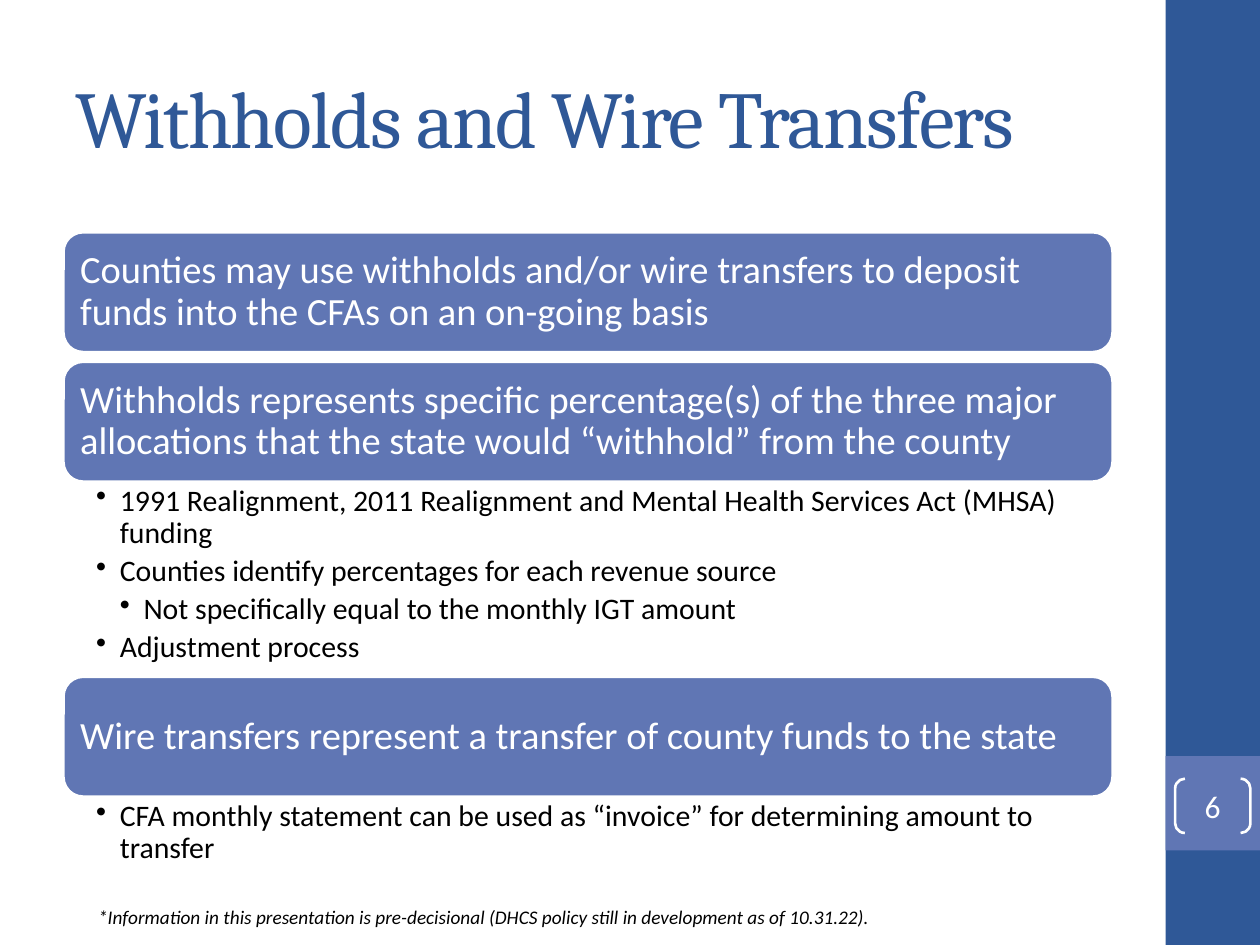
"""Build the slide on withholds and wire transfers."""
from lxml.etree import SubElement
from pptx import Presentation
from pptx.dml.color import RGBColor
from pptx.enum.shapes import MSO_SHAPE as Shape
from pptx.enum.text import MSO_ANCHOR as Anchor, PP_ALIGN as Align
from pptx.oxml.ns import qn
from pptx.util import Pt

COLORS = {"navy": "2F5897", "blue": "6076B4", "white": "FFFFFF", "black": "000000"}
TITLE = "Withholds and Wire Transfers"
FOOTNOTE = ("*Information in this presentation is pre-decisional "
            "(DHCS policy still in development as of 10.31.22).")
PAGE = "6"
SECTIONS = [
    ("Counties may use withholds and/or wire transfers to deposit funds into the CFAs "
     "on an on-going basis", []),
    ("Withholds represents specific percentage(s) of the three major allocations that "
     "the state would “withhold” from the county",
     [(1, "1991 Realignment, 2011 Realignment and Mental Health Services Act (MHSA) funding"),
      (1, "Counties identify percentages for each revenue source"),
      (2, "Not specifically equal to the monthly IGT amount"),
      (1, "Adjustment process")]),
    ("Wire transfers represent a transfer of county funds to the state",
     [(1, "CFA monthly statement can be used as “invoice” for determining amount to transfer")]),
]
LEFT, WIDTH = 36, 600
TOP, BANNER_HEIGHT, GAP = 132.5, 69, 5
DETAIL_HEIGHTS = {0: GAP, 1: 42.5, 4: 111}
INDENT = 13.5
SIDEBAR_LEFT, SIDEBAR_WIDTH = 666, 54


def color(name):
    return RGBColor.from_string(COLORS[name])


def add_block(kind, box, fill=None, line=None, weight=1):
    block = slide.shapes.add_shape(kind, *map(Pt, box))
    block.shadow.inherit = False
    if fill:
        block.fill.solid()
        block.fill.fore_color.rgb = color(fill)
    else:
        block.fill.background()
    if line:
        block.line.color.rgb = color(line)
        block.line.width = Pt(weight)
    else:
        block.line.fill.background()
    return block


def set_frame(holder, insets, anchor):
    frame = holder.text_frame
    frame.word_wrap = True
    frame.vertical_anchor = anchor
    frame.margin_left, frame.margin_top, frame.margin_right, frame.margin_bottom = map(Pt, insets)
    return frame


def write(paragraph, text, size, ink, face="Calibri", align=Align.LEFT):
    paragraph.text = text
    paragraph.alignment = align
    font = paragraph.font
    font.name, font.size, font.color.rgb = face, Pt(size), color(ink)


def add_text(box, insets=(7.2, 3.6, 7.2, 3.6), anchor=Anchor.TOP):
    return set_frame(slide.shapes.add_textbox(*map(Pt, box)), insets, anchor)


def add_details(details, top, height):
    frame = add_text((LEFT, top, WIDTH, height), (19, 2, 12, 2))
    for index, (level, text) in enumerate(details):
        detail = frame.add_paragraph() if index else frame.paragraphs[0]
        write(detail, text, 17, "black")
        detail.level = level
        detail.line_spacing = 0.9
        detail.space_after = Pt(3.4)
        properties = detail._p.get_or_add_pPr()
        properties.set("marL", str(Pt(INDENT * level)))
        properties.set("indent", str(Pt(-INDENT)))
        bullet = properties.makeelement(qn("a:buChar"), {"char": "•"})
        properties.insert_element_before(bullet, "a:tabLst", "a:defRPr", "a:extLst")


deck = Presentation()
deck.slide_width, deck.slide_height = Pt(720), Pt(540)
slide = deck.slides.add_slide(deck.slide_layouts[6])

add_block(Shape.RECTANGLE, (SIDEBAR_LEFT, 0, SIDEBAR_WIDTH, 540), "navy")
add_block(Shape.RECTANGLE, (SIDEBAR_LEFT, 432, SIDEBAR_WIDTH, 54), "blue")

footnote = add_text((49, 513.5, 595, 21)).paragraphs[0]
write(footnote, FOOTNOTE, 11, "black")
footnote.font.italic = True

title = add_text((LEFT, 21.6, WIDTH, 90), anchor=Anchor.MIDDLE).paragraphs[0]
write(title, TITLE, 46, "navy", "Cambria")
title.runs[0].font._element.set("spc", "-100")

top = TOP
for heading, details in SECTIONS:
    banner = add_block(Shape.ROUNDED_RECTANGLE, (LEFT, top, WIDTH, BANNER_HEIGHT),
                       "blue", "white", 2)
    statement = set_frame(banner, (6.5,) * 4, Anchor.MIDDLE).paragraphs[0]
    write(statement, heading, 22, "white")
    statement.line_spacing = 0.9
    top += BANNER_HEIGHT
    height = DETAIL_HEIGHTS[len(details)]
    if details:
        add_details(details, top, height)
    top += height

brackets = add_block(Shape.DOUBLE_BRACKET, (671.5, 445, 43, 31), line="white", weight=1.5)
brackets.adjustments[0] = 0.18
page = set_frame(brackets, (0,) * 4, Anchor.MIDDLE).paragraphs[0]
write(page, PAGE, 18, "white", align=Align.CENTER)

deck.save("out.pptx")
